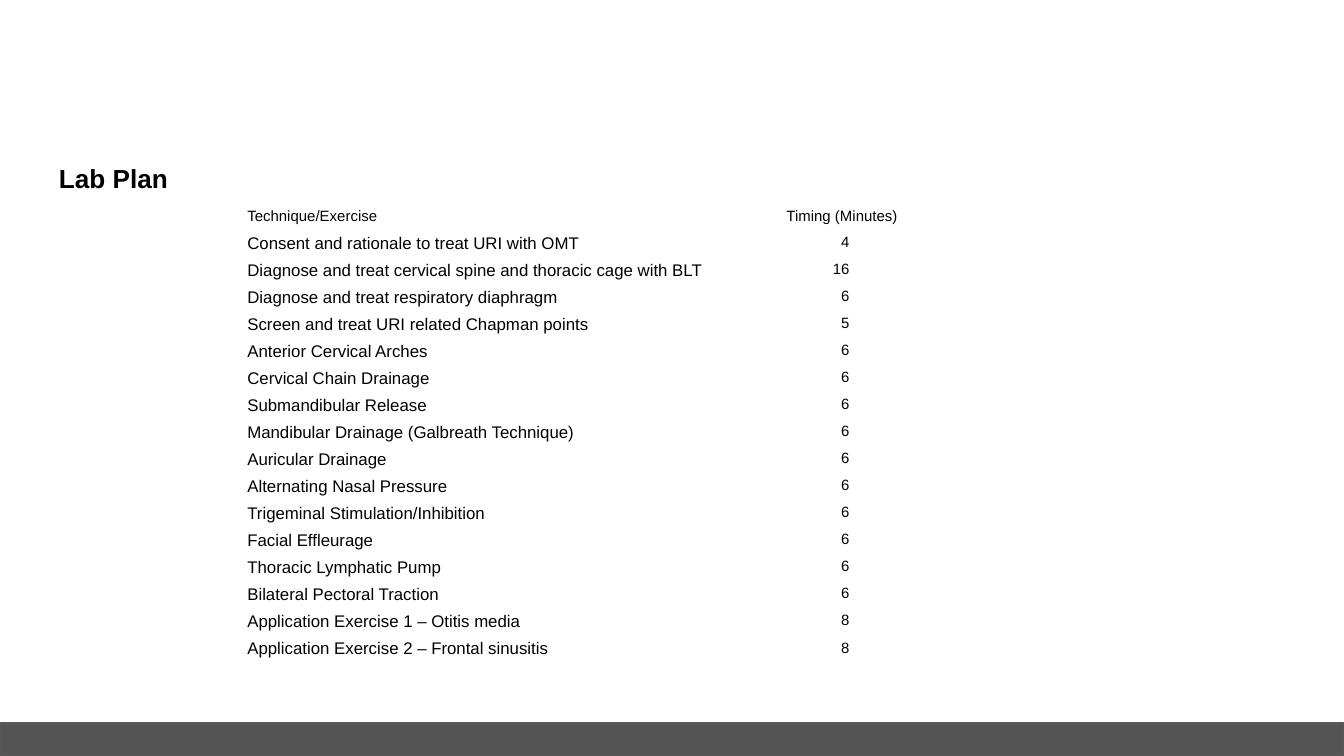
from typing import NamedTuple

from pptx import Presentation
from pptx.dml.color import RGBColor
from pptx.enum.shapes import MSO_SHAPE
from pptx.enum.text import MSO_ANCHOR, PP_ALIGN
from pptx.util import Inches, Pt

FONT = "Arial"
BLACK = RGBColor(0x00, 0x00, 0x00)
BAR_FILL = RGBColor(0x55, 0x55, 0x55)
BAR_LINE = RGBColor(0x59, 0x59, 0x59)

# 16:9 slide
SLIDE_WIDTH = 10
SLIDE_HEIGHT = SLIDE_WIDTH * 9 / 16

TABLE_HEIGHT, HEADER_HEIGHT = 3.41, 0.19
COLUMN_WIDTHS = (3.9, 1.15)
CELL_MARGIN, MINUTES_MARGIN = 0.05, 0.52


class Exercise(NamedTuple):
    name: str
    minutes: int


EXERCISES = [
    Exercise("Consent and rationale to treat URI with OMT", 4),
    Exercise("Diagnose and treat cervical spine and thoracic cage with BLT", 16),
    Exercise("Diagnose and treat respiratory diaphragm", 6),
    Exercise("Screen and treat URI related Chapman points", 5),
    Exercise("Anterior Cervical Arches", 6),
    Exercise("Cervical Chain Drainage", 6),
    Exercise("Submandibular Release", 6),
    Exercise("Mandibular Drainage (Galbreath Technique)", 6),
    Exercise("Auricular Drainage", 6),
    Exercise("Alternating Nasal Pressure", 6),
    Exercise("Trigeminal Stimulation/Inhibition", 6),
    Exercise("Facial Effleurage", 6),
    Exercise("Thoracic Lymphatic Pump", 6),
    Exercise("Bilateral Pectoral Traction", 6),
    Exercise("Application Exercise 1 – Otitis media", 8),
    Exercise("Application Exercise 2 – Frontal sinusitis", 8),
]


def add_run(p, text: str, size: float, bold: bool = False) -> None:
    r = p.add_run()
    r.text = text
    r.font.name = FONT
    r.font.size = Pt(size)
    r.font.bold = bold
    r.font.color.rgb = BLACK


def fill_cell(cell, text: str, size: float, align: PP_ALIGN = PP_ALIGN.LEFT,
              right: float = CELL_MARGIN) -> None:
    cell.fill.background()
    cell.vertical_anchor = MSO_ANCHOR.TOP
    cell.margin_left, cell.margin_right = Inches(CELL_MARGIN), Inches(right)
    cell.margin_top, cell.margin_bottom = Inches(0.01), Inches(0)
    p = cell.text_frame.paragraphs[0]
    p.alignment = align
    add_run(p, text, size)


def add_footer_bar(s) -> None:
    sp = s.shapes.add_shape(MSO_SHAPE.RECTANGLE, Inches(0), Inches(5.38),
                            Inches(SLIDE_WIDTH), Inches(0.24))
    sp.shadow.inherit = False
    sp.fill.solid()
    sp.fill.fore_color.rgb = BAR_FILL
    sp.line.color.rgb = BAR_LINE
    sp.line.width = Pt(0.75)


def add_title(s, text: str) -> None:
    sp = s.shapes.add_textbox(Inches(0.34), Inches(1.11), Inches(9.32), Inches(0.63))
    tf = sp.text_frame
    tf.word_wrap = True
    tf.vertical_anchor = MSO_ANCHOR.TOP
    tf.margin_left = tf.margin_right = Inches(0.1)
    tf.margin_top = tf.margin_bottom = Inches(0.1)
    add_run(tf.paragraphs[0], text, 14, bold=True)


def add_plan_table(s, exercises: list[Exercise]) -> None:
    frame = s.shapes.add_table(len(exercises) + 1, 2, Inches(1.79), Inches(1.54),
                               Inches(sum(COLUMN_WIDTHS)), Inches(TABLE_HEIGHT))
    table = frame.table
    table.first_row = table.horz_banding = False
    for column, width in zip(table.columns, COLUMN_WIDTHS):
        column.width = Inches(width)

    # Header row
    table.rows[0].height = Inches(HEADER_HEIGHT)
    fill_cell(table.cell(0, 0), "Technique/Exercise", 8)
    fill_cell(table.cell(0, 1), "Timing (Minutes)", 8, PP_ALIGN.CENTER)

    # One row per exercise, with the minutes lined up on their last digit
    row_height = Inches((TABLE_HEIGHT - HEADER_HEIGHT) / len(exercises))
    for i, exercise in enumerate(exercises, start=1):
        table.rows[i].height = row_height
        fill_cell(table.cell(i, 0), exercise.name, 9)
        fill_cell(table.cell(i, 1), str(exercise.minutes), 8,
                  PP_ALIGN.RIGHT, MINUTES_MARGIN)


def main() -> None:
    prs = Presentation()
    prs.slide_width, prs.slide_height = Inches(SLIDE_WIDTH), Inches(SLIDE_HEIGHT)
    s = prs.slides.add_slide(prs.slide_layouts[6])
    add_footer_bar(s)
    add_title(s, "Lab Plan")
    add_plan_table(s, EXERCISES)
    prs.save("out.pptx")


if __name__ == "__main__":
    main()
